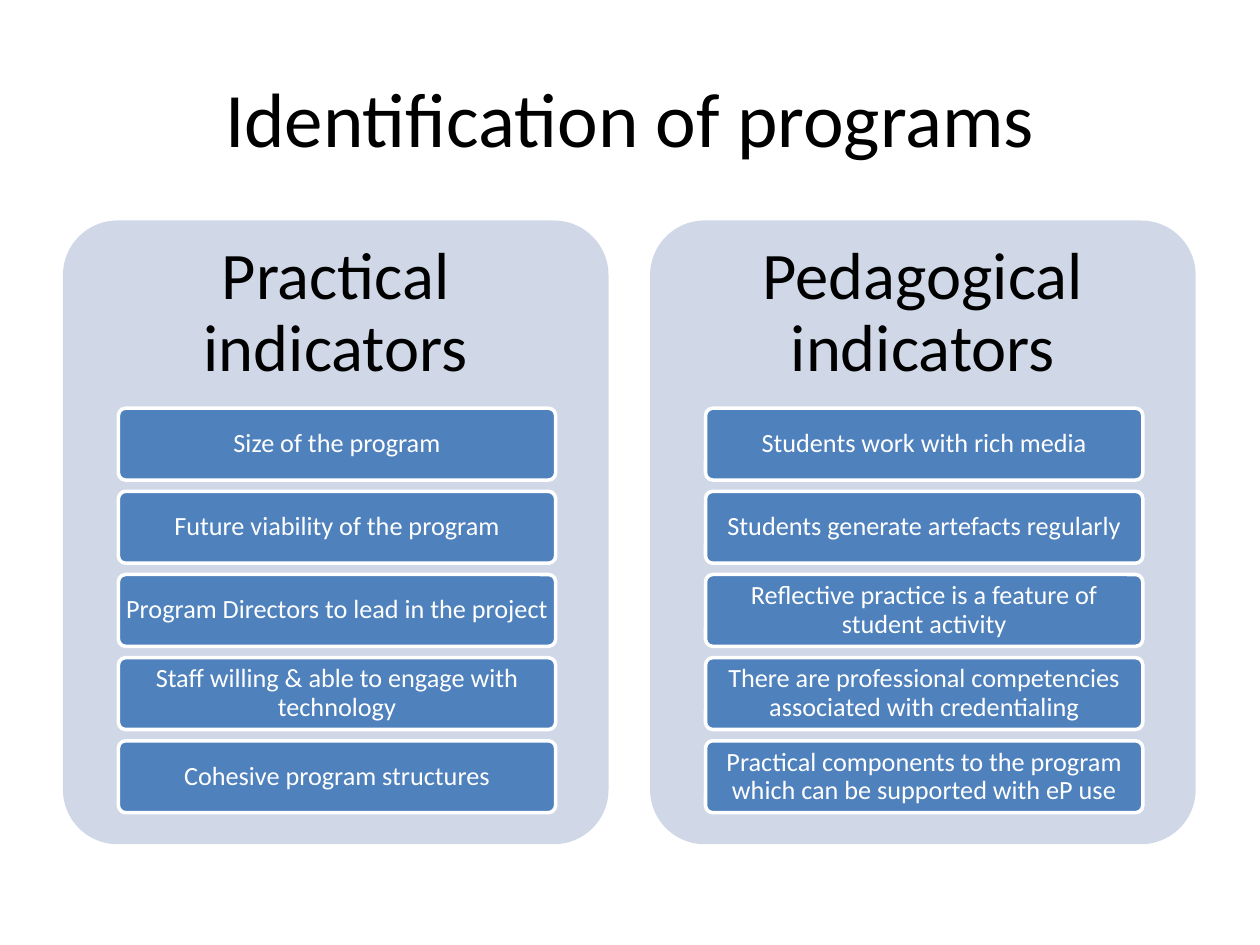
from pptx import Presentation
from pptx.dml.color import RGBColor
from pptx.enum.shapes import MSO_SHAPE
from pptx.enum.text import MSO_ANCHOR, PP_ALIGN
from pptx.util import Inches, Pt

FONT = "Calibri"
BLACK, WHITE = "000000", "FFFFFF"
PANEL_FILL, CARD_FILL = "D0D8E8", "4F81BD"

PANEL_TOP, PANEL_WIDTH, PANEL_HEIGHT = 1.75, 4.33, 4.95
PANEL_LEFT, PANEL_STEP = 0.5, 4.66
HEADING_HEIGHT = 1.48
CARD_TOP, CARD_WIDTH, CARD_HEIGHT, CARD_STEP = 3.24, 3.47, 0.57, 0.66
CARD_INDENT = 0.44

INDICATORS = {
    "Practical indicators": [
        "Size of the program",
        "Future viability of the program",
        "Program Directors to lead in the project",
        "Staff willing & able to engage with technology",
        "Cohesive program structures",
    ],
    "Pedagogical indicators": [
        "Students work with rich media",
        "Students generate artefacts regularly",
        "Reflective practice is a feature of student activity",
        "There are professional competencies associated with credentialing",
        "Practical components to the program which can be supported with eP use",
    ],
}


def color(value):
    return RGBColor.from_string(value)


def write_text(shape, text, size, text_color, margins, line_spacing=0.9):
    """Centre text in a shape; margins are (horizontal, vertical) inches."""
    frame = shape.text_frame
    frame.text = text
    frame.word_wrap = True
    frame.vertical_anchor = MSO_ANCHOR.MIDDLE
    frame.margin_left = frame.margin_right = Inches(margins[0])
    frame.margin_top = frame.margin_bottom = Inches(margins[1])
    paragraph = frame.paragraphs[0]
    paragraph.alignment = PP_ALIGN.CENTER
    paragraph.line_spacing = line_spacing
    paragraph.font.name = FONT
    paragraph.font.size = Pt(size)
    paragraph.font.color.rgb = color(text_color)


def add_title(page, text):
    title = page.shapes.title
    title.left, title.top = Inches(0.5), Inches(0.3)
    title.width, title.height = Inches(9), Inches(1.25)
    write_text(title, text, 44, BLACK, (0.1, 0.05), line_spacing=1.0)


def add_rounded_box(page, left, top, width, height, fill):
    box = page.shapes.add_shape(
        MSO_SHAPE.ROUNDED_RECTANGLE,
        Inches(left), Inches(top), Inches(width), Inches(height),
    )
    box.adjustments[0] = 0.1
    box.shadow.inherit = False
    box.fill.solid()
    box.fill.fore_color.rgb = color(fill)
    box.line.fill.background()
    return box


def add_card(page, left, top, text):
    card = add_rounded_box(page, left, top, CARD_WIDTH, CARD_HEIGHT, CARD_FILL)
    card.line.color.rgb = color(WHITE)
    card.line.width = Pt(2)
    write_text(card, text, 15, WHITE, (0.02, 0.01))


def add_panel(page, left, heading, items):
    add_rounded_box(page, left, PANEL_TOP, PANEL_WIDTH, PANEL_HEIGHT, PANEL_FILL)
    heading_box = page.shapes.add_textbox(
        Inches(left), Inches(PANEL_TOP), Inches(PANEL_WIDTH), Inches(HEADING_HEIGHT)
    )
    write_text(heading_box, heading, 38, BLACK, (0.16, 0.16))
    for row, item in enumerate(items):
        add_card(page, left + CARD_INDENT, CARD_TOP + row * CARD_STEP, item)


def main():
    deck = Presentation()
    deck.slide_width, deck.slide_height = Inches(10), Inches(7.5)
    page = deck.slides.add_slide(deck.slide_layouts.get_by_name("Title Only"))
    add_title(page, "Identification of programs")
    for column, (heading, items) in enumerate(INDICATORS.items()):
        add_panel(page, PANEL_LEFT + column * PANEL_STEP, heading, items)
    deck.save("out.pptx")


if __name__ == "__main__":
    main()
